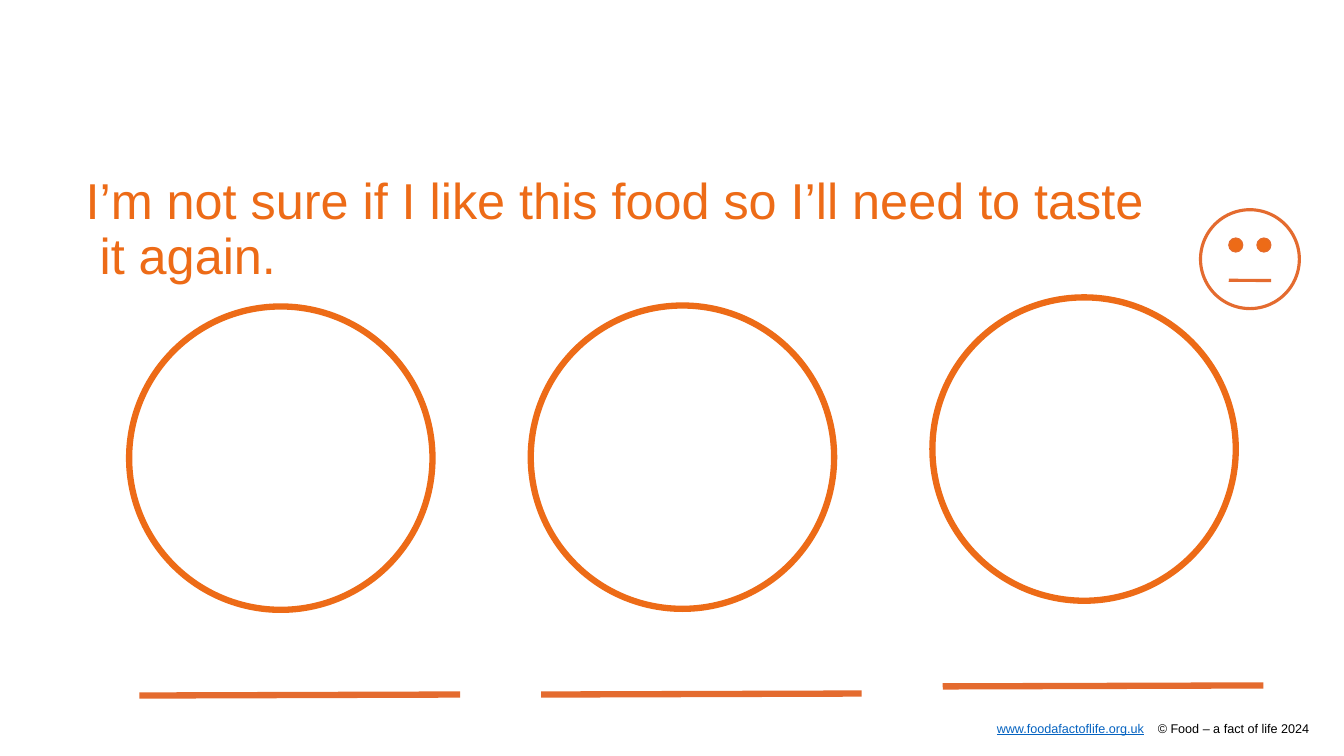
from lxml import etree
from pptx import Presentation
from pptx.dml.color import RGBColor
from pptx.enum import shapes, text
from pptx.oxml.ns import qn
from pptx.util import Pt

ORANGE = RGBColor(0xED, 0x6B, 0x17)
RUST = RGBColor(0xE4, 0x6B, 0x2F)
WHITE = RGBColor(0xFF, 0xFF, 0xFF)
BLACK = RGBColor(0, 0, 0)
LINK_BLUE = RGBColor(0x05, 0x63, 0xC1)


def add_text(page, left, top, width, height, spans, size, spacing=1.0, tab=None):
    """Place one paragraph; spans are (words, colour, underlined)."""
    box = page.shapes.add_textbox(Pt(left), Pt(top), Pt(width), Pt(height))
    frame = box.text_frame
    frame.word_wrap = True
    frame.vertical_anchor = text.MSO_ANCHOR.TOP
    frame.margin_left = frame.margin_top = 0
    frame.margin_right = frame.margin_bottom = 0
    para = frame.paragraphs[0]
    para.line_spacing = spacing
    if tab is not None:
        stops = etree.SubElement(para._p.get_or_add_pPr(), qn("a:tabLst"))
        etree.SubElement(stops, qn("a:tab"), pos=str(Pt(tab)), algn="l")
    for words, colour, underlined in spans:
        span = para.add_run()
        span.text = words
        span.font.name = "Arial"
        span.font.size = Pt(size)
        span.font.color.rgb = colour
        span.font.underline = underlined


def add_circle(holder, left, top, size, line, weight, fill=None):
    circle = holder.shapes.add_shape(
        shapes.MSO_SHAPE.OVAL, Pt(left), Pt(top), Pt(size), Pt(size))
    circle.shadow.inherit = False
    if fill is None:
        circle.fill.background()
    else:
        circle.fill.solid()
        circle.fill.fore_color.rgb = fill
    circle.line.color.rgb = line
    circle.line.width = Pt(weight)


def add_line(holder, left, top, right, bottom, weight):
    line = holder.shapes.add_connector(
        shapes.MSO_CONNECTOR.STRAIGHT, Pt(left), Pt(top), Pt(right), Pt(bottom))
    line.line.color.rgb = RUST
    line.line.width = Pt(weight)
    etree.SubElement(line._element.spPr, qn("a:effectLst"))


def add_food_space(page, left, top, size):
    """A circle to draw a food in, with a line below for its name."""
    add_circle(page, left, top, size, ORANGE, 4.5)
    line_left, line_top = left + 7.4, top + size + 61.2
    add_line(page, line_left, line_top, line_left + 229, line_top - 0.7, 4.5)


def add_unsure_face(page, left, top, size):
    face = page.shapes.add_group_shape()
    add_circle(face, left, top, size, RUST, 2.25, fill=WHITE)
    for eye in (20.2, 40.3):
        add_circle(face, left + eye, top + 20.2, 10.1, RUST, 0.75, fill=ORANGE)
    add_line(face, left + 20.2, top + 50.4, left + 50.4, top + 50.6, 2.25)


def add_footer(page, left, top, width, height):
    add_text(page, left, top, width, height,
             [("www.foodafactoflife.org.uk", LINK_BLUE, True),
              ("\t© Food – a fact of life 2024", BLACK, False)],
             size=9, tab=115)


def build_tasting_page(deck):
    page = deck.slides.add_slide(deck.slide_layouts[6])
    add_footer(page, 712, 514.8, 224, 10.8)
    # Statement; a no-break space opens its second line
    add_text(page, 61.2, 126, 765.4, 56.9,
             [("I’m not sure if I like this food so I’ll need to taste  it again.",
               ORANGE, False)], size=36, spacing=0.9)
    # Three food spaces at equal steps across
    for column, top in enumerate((218.9, 218.2, 212.4)):
        add_food_space(page, 92.2 + 286.9 * column, top, 216.7)
    add_unsure_face(page, 857.5, 149.8, 70.6)


def main():
    deck = Presentation()
    deck.slide_width, deck.slide_height = Pt(960), Pt(540)
    build_tasting_page(deck)
    deck.save("out.pptx")


if __name__ == "__main__":
    main()
